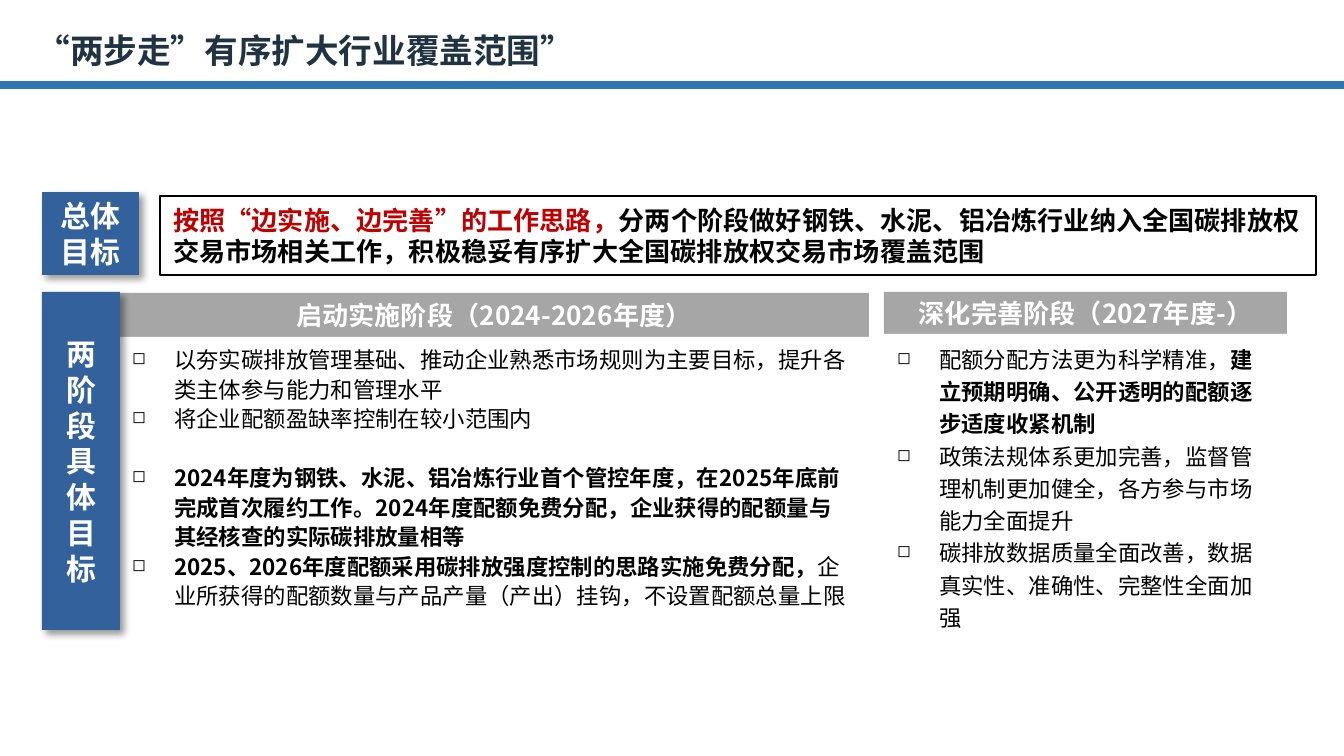
import pptx
import pptx.dml.color
import pptx.enum.shapes
import pptx.enum.text
import pptx.oxml
import pptx.oxml.ns
import pptx.util

WIDTH, HEIGHT = 1344, 756
PX = 9144000 / WIDTH  # EMU in one px of a slide 10 inches wide
FONT = "Noto Sans CJK SC"
LINE_HEIGHT = 1.2  # height of a single line, in font sizes
HANGING = 42
COLORS = {
    "title": "1F3342", "rule": "2E75B6", "label": "32619C", "header": "A6A6A6",
    "white": "FFFFFF", "black": "000000", "accent": "C00000",
}
ALIGN = pptx.enum.text.PP_ALIGN
ANCHOR = pptx.enum.text.MSO_ANCHOR

# Each paragraph: space before in points, then runs of (text, bold)
START_POINTS = [
    (0, [("以夯实碳排放管理基础、推动企业熟悉市场规则为主要目标，提升各类主体参与能力和管理水平", False)]),
    (0, [("将企业配额盈缺率控制在较小范围内", False)]),
    (16, [("2024年度为钢铁、水泥、铝冶炼行业首个管控年度，在2025年底前完成首次履约工作。"
           "2024年度配额免费分配，企业获得的配额量与其经核查的实际碳排放量相等", True)]),
    (0, [("2025、2026年度配额采用碳排放强度控制的思路实施免费分配，", True),
         ("企业所获得的配额数量与产品产量（产出）挂钩，不设置配额总量上限", False)]),
]
DEEPEN_POINTS = [
    (0, [("配额分配方法更为科学精准，", False),
         ("建立预期明确、公开透明的配额逐步适度收紧机制", True)]),
    (0, [("政策法规体系更加完善，监督管理机制更加健全，各方参与市场能力全面提升", False)]),
    (0, [("碳排放数据质量全面改善，数据真实性、准确性、完整性全面加强", False)]),
]


def px(value):
    return pptx.util.Emu(round(value * PX))


def rgb(name):
    return pptx.dml.color.RGBColor.from_string(COLORS[name])


def xml(text):
    namespace = pptx.oxml.ns.nsdecls("a")
    return pptx.oxml.parse_xml(text.replace(">", f" {namespace}>", 1))


def add_run(paragraph, text, size, color, bold=True):
    run = paragraph.add_run()
    run.text = text
    run.font.size = pptx.util.Pt(size)
    run.font.bold = bold
    run.font.name = FONT
    run.font.color.rgb = rgb(color)
    east_asian = xml("<a:ea></a:ea>")
    east_asian.set("typeface", FONT)
    run.font._element.append(east_asian)


def set_spacing(paragraph, size, spacing=1.0):
    paragraph.line_spacing = pptx.util.Pt(round(size * LINE_HEIGHT * spacing, 1))


def add_box(slide, box, fill=None, line=None, anchor=ANCHOR.MIDDLE):
    shape = slide.shapes.add_shape(
        pptx.enum.shapes.MSO_SHAPE.RECTANGLE, *[px(value) for value in box])
    shape.shadow.inherit = False
    if fill:
        shape.fill.solid()
        shape.fill.fore_color.rgb = rgb(fill)
    else:
        shape.fill.background()
    if line:
        shape.line.color.rgb = rgb(line)
        shape.line.width = pptx.util.Pt(1.5)
    else:
        shape.line.fill.background()
    shape.text_frame.word_wrap = True
    shape.text_frame.vertical_anchor = anchor
    return shape


def write_line(shape, runs, size, align=ALIGN.CENTER):
    """Writes one paragraph from runs of (text, color)."""
    paragraph = shape.text_frame.paragraphs[0]
    paragraph.alignment = align
    set_spacing(paragraph, size)
    for text, color in runs:
        add_run(paragraph, text, size, color)


def add_title(slide, box, text):
    title = slide.shapes.title
    title.left, title.top, title.width, title.height = [px(value) for value in box]
    title.text_frame.auto_size = pptx.enum.text.MSO_AUTO_SIZE.NONE
    title.text_frame.word_wrap = True
    title.text_frame.vertical_anchor = ANCHOR.MIDDLE
    write_line(title, [(text, "title")], 18, ALIGN.LEFT)


def add_rule(slide, top, width):
    rule = slide.shapes.add_connector(
        pptx.enum.shapes.MSO_CONNECTOR.STRAIGHT, 0, px(top), px(width), px(top))
    rule.line.color.rgb = rgb("rule")
    rule.line.width = pptx.util.Pt(4.5)
    rule._element.spPr.append(xml("<a:effectLst></a:effectLst>"))


def add_label(slide, box, text):
    label = add_box(slide, box, fill="label")
    effects = label._element.spPr.find(pptx.oxml.ns.qn("a:effectLst"))
    effects.append(xml(
        '<a:outerShdw blurRad="50800" dist="38100" dir="2700000" algn="tl" rotWithShape="0">'
        '<a:srgbClr val="000000"><a:alpha val="40000"/></a:srgbClr></a:outerShdw>'))
    write_line(label, [(text, "white")], 16)


def add_bullet(paragraph):
    properties = paragraph._element.get_or_add_pPr()
    properties.set("marL", str(px(HANGING)))
    properties.set("indent", str(-px(HANGING)))
    properties.append(xml('<a:buSzPct val="75000"></a:buSzPct>'))
    properties.append(xml('<a:buChar char="◻"></a:buChar>'))


def add_phase(slide, box, header_height, heading, points, spacing):
    left, top, width, height = box
    # Header band
    header = add_box(slide, (left, top, width, header_height), fill="header")
    frame = header.text_frame
    frame.margin_left = frame.margin_right = frame.margin_top = frame.margin_bottom = 0
    write_line(header, [(heading, "white")], 14)
    # Bulleted points
    body = add_box(slide, (left, top + header_height, width, height - header_height),
                   fill="white", anchor=ANCHOR.TOP)
    frame = body.text_frame
    frame.margin_right = px(17)
    for index, (space_before, runs) in enumerate(points):
        paragraph = frame.add_paragraph() if index else frame.paragraphs[0]
        add_bullet(paragraph)
        paragraph.alignment = ALIGN.LEFT
        set_spacing(paragraph, 12, spacing)
        if space_before:
            paragraph.space_before = pptx.util.Pt(space_before)
        for text, bold in runs:
            add_run(paragraph, text, 12, "black", bold)


def add_goal(slide, box):
    goal = add_box(slide, box, line="black")
    write_line(goal, [
        ("按照“边实施、边完善”的工作思路，", "accent"),
        ("分两个阶段做好钢铁、水泥、铝冶炼行业纳入全国碳排放权交易市场相关工作，"
         "积极稳妥有序扩大全国碳排放权交易市场覆盖范围", "black"),
    ], 14, ALIGN.LEFT)


def main():
    presentation = pptx.Presentation()
    presentation.slide_width, presentation.slide_height = px(WIDTH), px(HEIGHT)
    slide = presentation.slides.add_slide(presentation.slide_layouts[5])

    # Title and rule
    add_title(slide, (23, 23, 1297, 54), "“两步走”有序扩大行业覆盖范围”")
    add_rule(slide, 85, WIDTH)

    # Phases, with the labels above them
    add_phase(slide, (119, 293, 750, 338), 44, "启动实施阶段（2024-2026年度）",
              START_POINTS, 1.1)
    add_label(slide, (42, 192, 97, 83), "总体目标")
    add_label(slide, (42, 292, 78, 338), "两阶段具体目标")
    add_phase(slide, (884, 292, 403, 338), 42, "深化完善阶段（2027年度-）",
              DEEPEN_POINTS, 1.2)

    # Overall goal
    add_goal(slide, (160, 196, 1156, 79))
    presentation.save("out.pptx")


if __name__ == "__main__":
    main()
